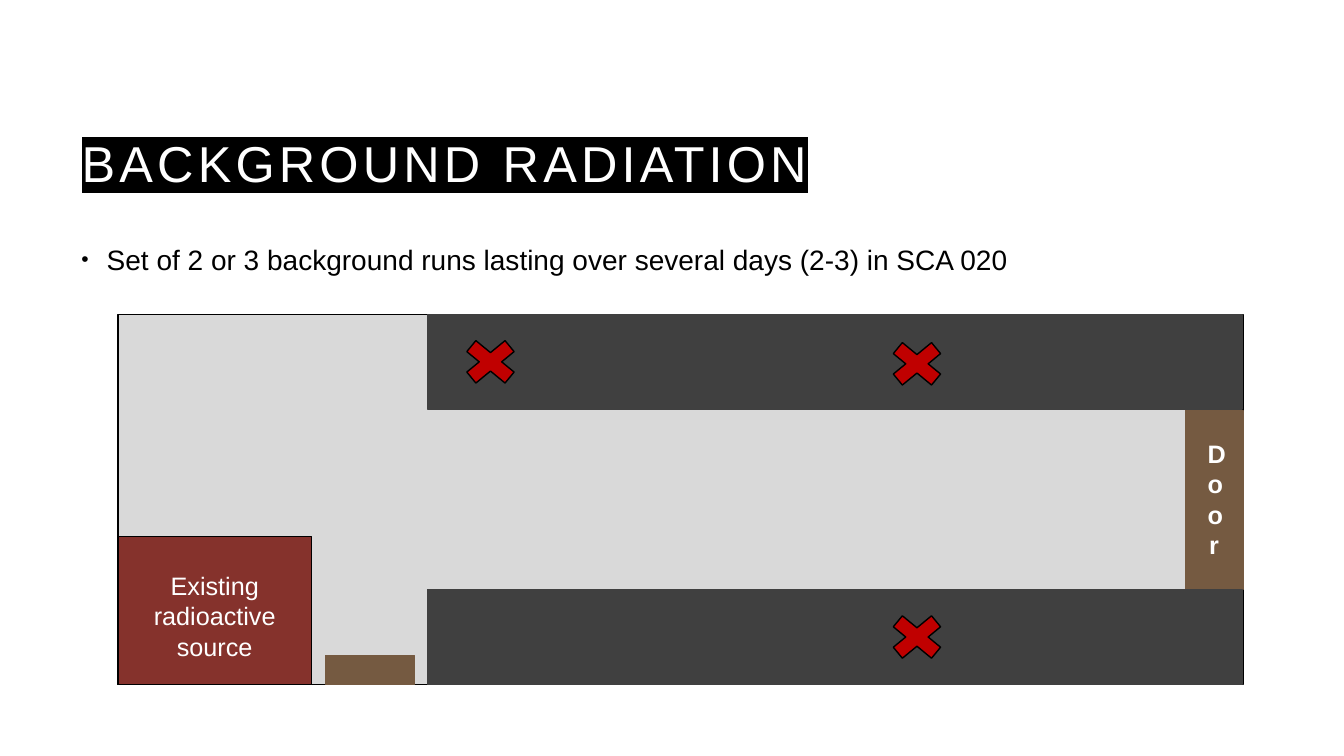
from lxml import etree
from pptx import Presentation
from pptx import util as u
from pptx.dml.color import RGBColor
from pptx.enum import shapes, text
from pptx.oxml.ns import qn

HUES = {
    "black": "000000",
    "white": "FFFFFF",
    "floor": "D9D9D9",
    "wood": "755A41",
    "source": "85322C",
    "bench": "404040",
    "mark": "C00000",
}
RECT = shapes.MSO_SHAPE.RECTANGLE
CROSS = shapes.MSO_SHAPE.MATH_MULTIPLY


class Board:
    font = "Arial"

    def __init__(self, deck):
        self.slide = deck.slides.add_slide(deck.slide_layouts[5])

    def hue(self, name):
        return RGBColor.from_string(HUES[name])

    def style(self, para, size, color, bold=False):
        for run in para.runs:
            run.font.name = self.font
            run.font.size = u.Pt(size)
            run.font.bold = bold
            run.font.color.rgb = self.hue(color)

    def title(self, words, box):
        head = self.slide.shapes.title
        head.left, head.top, head.width, head.height = map(u.Inches, box)
        frame = head.text_frame
        frame.text = words
        frame.word_wrap = True
        frame.vertical_anchor = text.MSO_ANCHOR.BOTTOM
        para = frame.paragraphs[0]
        para.alignment = text.PP_ALIGN.LEFT
        para.line_spacing = 1.2
        self.style(para, 36, "white")
        props = para.runs[0].font._element
        props.set("spc", "300")
        mark = etree.Element(qn("a:highlight"))
        etree.SubElement(mark, qn("a:srgbClr"), val=HUES["black"])
        props.find(qn("a:solidFill")).addnext(mark)

    def label(self, words, box, size=18, color="white", bold=False, center=True):
        area = self.slide.shapes.add_textbox(*map(u.Inches, box))
        frame = area.text_frame
        frame.text = words
        frame.word_wrap = True
        para = frame.paragraphs[0]
        para.alignment = text.PP_ALIGN.CENTER if center else text.PP_ALIGN.LEFT
        self.style(para, size, color, bold)
        return para

    def bullet(self, words, box):
        para = self.label(words, box, 20, "black", center=False)
        para.line_spacing = 1.2
        props = para._p.get_or_add_pPr()
        props.set("marL", str(u.Inches(0.25)))
        props.set("indent", str(-u.Inches(0.25)))
        tint = etree.SubElement(props, qn("a:buClr"))
        etree.SubElement(tint, qn("a:srgbClr"), val=HUES["black"])
        etree.SubElement(props, qn("a:buSzPct"), val="75000")
        etree.SubElement(props, qn("a:buFont"), typeface=self.font)
        etree.SubElement(props, qn("a:buChar"), char="•")

    def shape(self, kind, box, fill, line):
        item = self.slide.shapes.add_shape(kind, *map(u.Inches, box))
        item.shadow.inherit = False
        item.fill.solid()
        item.fill.fore_color.rgb = self.hue(fill)
        item.line.color.rgb = self.hue(line)
        item.line.width = u.Pt(1)


def main():
    deck = Presentation()
    deck.slide_width = u.Inches(13.33)
    deck.slide_height = u.Inches(7.5)
    board = Board(deck)
    board.title("BACKGROUND RADIATION", (0.71, 0.71, 11.62, 1.25))
    board.bullet(
        "Set of 2 or 3 background runs lasting over several days (2-3) in SCA 020",
        (0.71, 2.29, 11.62, 4.21),
    )
    board.shape(RECT, (1.17, 3.12, 11.16, 3.67), "floor", "black")
    board.shape(RECT, (11.76, 4.07, 0.57, 1.78), "wood", "wood")
    board.shape(RECT, (1.17, 5.32, 1.92, 1.47), "source", "black")
    board.label("Door", (11.88, 4.3, 0.32, 1.31), bold=True)
    board.label("Existing radioactive source", (1.33, 5.61, 1.6, 1.01))
    for top in (3.12, 5.85):
        board.shape(RECT, (4.24, top, 8.08, 0.94), "bench", "bench")
    board.shape(RECT, (3.23, 6.5, 0.88, 0.29), "wood", "wood")
    for left, top in ((8.73, 3.31), (8.73, 6.02), (4.5, 3.29)):
        board.shape(CROSS, (left, top, 0.73, 0.6), "mark", "black")
    deck.save("out.pptx")


if __name__ == "__main__":
    main()
